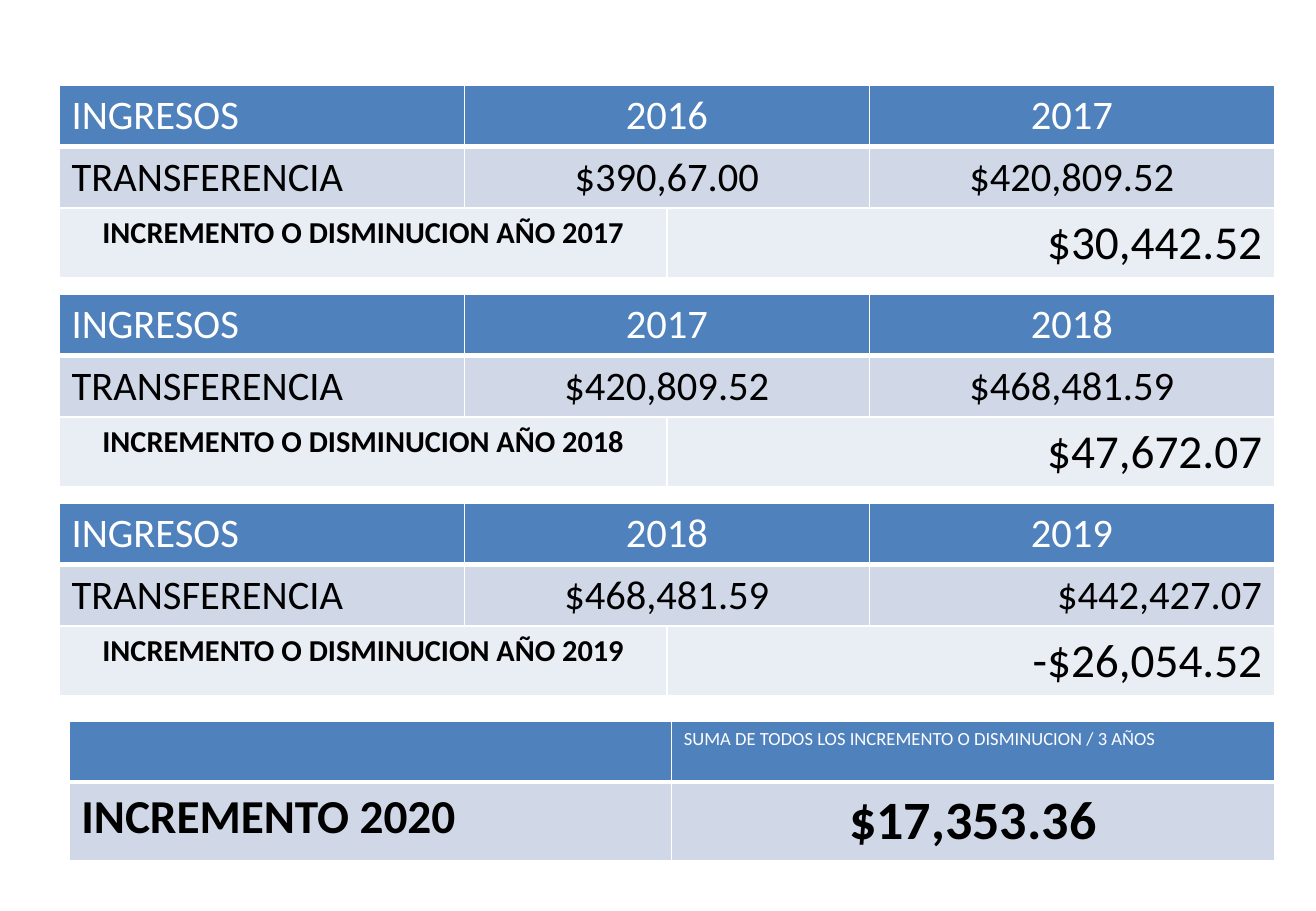
from dataclasses import dataclass

from lxml import etree
from pptx import Presentation
from pptx.dml.color import RGBColor
from pptx.enum.text import PP_ALIGN
from pptx.oxml.ns import qn
from pptx.util import Inches, Pt

LEFT, CENTER, RIGHT = PP_ALIGN.LEFT, PP_ALIGN.CENTER, PP_ALIGN.RIGHT
BLANK_LAYOUT = 6
GRID_COLUMNS, GRID_ROWS = 65, 75


@dataclass(frozen=True)
class Theme:
    font: str = "Calibri"
    header: str = "4F81BD"
    band: str = "D0D8E8"
    light_band: str = "E9EDF4"
    white: str = "FFFFFF"
    black: str = "000000"
    note: int = 11
    label: int = 18
    body: int = 24
    result: int = 28
    total: int = 32
    line: int = 1
    header_line: int = 3


@dataclass(frozen=True)
class Entry:
    """Text of one cell, its format and the number of columns it spans."""
    text: str
    size: int
    align: PP_ALIGN = LEFT
    bold: bool = False
    span: int = 1


def write(frame, text, *, font, size, color, bold=False, align=LEFT):
    paragraph = frame.paragraphs[0]
    paragraph.alignment = align
    run = paragraph.add_run()
    run.text = text
    run.font.name = font
    run.font.size = Pt(size)
    run.font.bold = bold
    run.font.color.rgb = RGBColor.from_string(color)


class SlideBuilder:
    def __init__(self, presentation, theme):
        self.theme = theme
        self.slide = presentation.slides.add_slide(
            presentation.slide_layouts[BLANK_LAYOUT])
        self.column = presentation.slide_width / GRID_COLUMNS
        self.row = presentation.slide_height / GRID_ROWS

    def borders(self, cell, bottom):
        properties = cell._tc.get_or_add_tcPr()
        for side in "LRTB":
            width = bottom if side == "B" else self.theme.line
            line = etree.SubElement(properties, qn(f"a:ln{side}"), w=str(Pt(width)))
            fill = etree.SubElement(line, qn("a:solidFill"))
            etree.SubElement(fill, qn("a:srgbClr"), val=self.theme.white)

    def table(self, left, top, widths, heights, rows):
        """Draw a table; its lengths are in grid columns and grid rows."""
        theme = self.theme
        table = self.slide.shapes.add_table(
            len(heights), len(widths),
            round(left * self.column), round(top * self.row),
            round(sum(widths) * self.column), round(sum(heights) * self.row)).table
        table.first_row = table.horz_banding = False
        for column, width in zip(table.columns, widths):
            column.width = round(width * self.column)

        fills = (theme.header, theme.band, theme.light_band)
        for index, (height, entries, fill) in enumerate(zip(heights, rows, fills)):
            table.rows[index].height = round(height * self.row)
            is_header = index == 0
            for cell in table.rows[index].cells:
                self.borders(cell, theme.header_line if is_header else theme.line)
                cell.fill.solid()
                cell.fill.fore_color.rgb = RGBColor.from_string(fill)
            position = 0
            for entry in entries:
                cell = table.cell(index, position)
                if entry.span > 1:
                    cell.merge(table.cell(index, position + entry.span - 1))
                if entry.text:
                    write(cell.text_frame, entry.text, font=theme.font,
                          size=entry.size, bold=entry.bold, align=entry.align,
                          color=theme.white if is_header else theme.black)
                position += entry.span


def main():
    presentation = Presentation()
    presentation.slide_width = Inches(10.83)
    presentation.slide_height = Inches(7.5)
    theme = Theme()
    builder = SlideBuilder(presentation, theme)

    # Yearly comparisons: year and income before, year and income after, change
    comparisons = (
        ("2016", "$390,67.00", "2017", "$420,809.52", CENTER, "$30,442.52"),
        ("2017", "$420,809.52", "2018", "$468,481.59", CENTER, "$47,672.07"),
        ("2018", "$468,481.59", "2019", "$442,427.07", RIGHT, "-$26,054.52"),
    )
    for order, (year_before, income_before, year, income, income_align,
                change) in enumerate(comparisons):
        builder.table(
            left=2.94, top=7 + 17.2 * order,
            widths=(20, 10, 10, 20), heights=(5, 5, 5.7),
            rows=(
                (Entry("INGRESOS", theme.body),
                 Entry(year_before, theme.body, CENTER, span=2),
                 Entry(year, theme.body, CENTER)),
                (Entry("TRANSFERENCIA", theme.body),
                 Entry(income_before, theme.body, CENTER, span=2),
                 Entry(income, theme.body, income_align)),
                (Entry(f"INCREMENTO O DISMINUCION AÑO {year}", theme.label,
                       CENTER, bold=True, span=2),
                 Entry(change, theme.result, RIGHT, span=2)),
            ))

    # Average increase for 2020
    builder.table(
        left=3.42, top=59.4, widths=(29.76, 29.76), heights=(5, 6.3),
        rows=(
            (Entry("", theme.note),
             Entry("SUMA DE TODOS LOS INCREMENTO O DISMINUCION / 3 AÑOS", theme.note)),
            (Entry("INCREMENTO 2020", theme.result, bold=True),
             Entry("$17,353.36", theme.total, CENTER, bold=True)),
        ))

    presentation.save("out.pptx")


if __name__ == "__main__":
    main()
